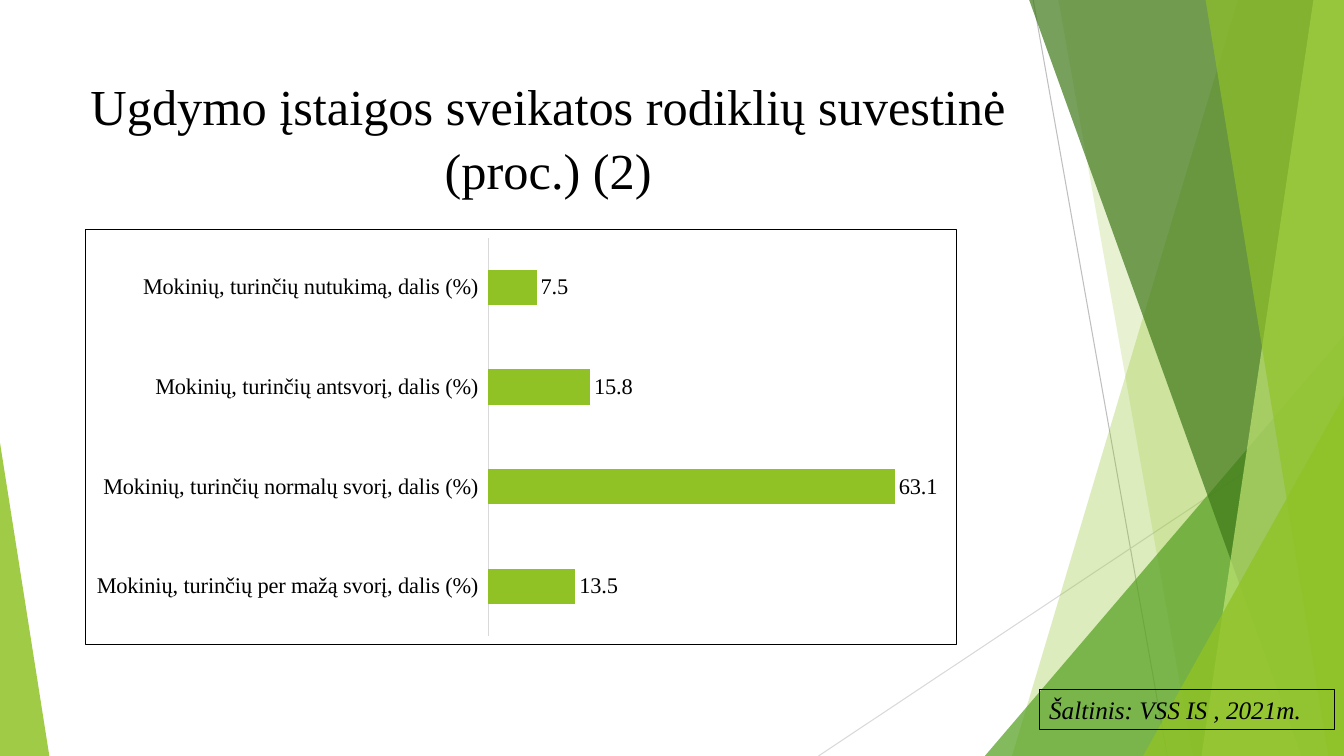
from dataclasses import dataclass

from lxml import etree
from pptx import Presentation
from pptx.chart.data import CategoryChartData
from pptx.dml.color import RGBColor
from pptx.enum.chart import XL_CHART_TYPE as ChartType, XL_LABEL_POSITION as LabelPosition
from pptx.enum.chart import XL_TICK_LABEL_POSITION as TickLabels, XL_TICK_MARK as TickMark
from pptx.enum.shapes import MSO_CONNECTOR as Connector, MSO_SHAPE as Shape
from pptx.enum.text import MSO_ANCHOR as Anchor, PP_ALIGN as Align
from pptx.oxml import parse_xml
from pptx.oxml.ns import nsdecls, qn
from pptx.util import Inches, Pt

SLIDE_WIDTH, SLIDE_HEIGHT = Inches(13.33), Inches(7.5)
COLUMN, ROW = SLIDE_WIDTH / 40, SLIDE_HEIGHT / 30


@dataclass(frozen=True)
class Theme:
    font: str = "Times New Roman"
    chart_font: str = "Cabin"
    title_size: int = 36
    source_size: int = 18
    label_size: int = 16
    chart_size: int = 10
    line_width: float = 0.75
    text: str = "000000"
    lime: str = "90C226"
    green: str = "54A021"
    forest: str = "3F7819"
    pale: str = "C0E474"
    ray: str = "BFBFBF"
    faint: str = "D9D9D9"


THEME = Theme()


@dataclass(frozen=True)
class Box:
    """An area of the slide, measured in grid columns and rows."""
    column: float
    row: float
    columns: float
    rows: float

    def point(self, column, row):
        return round((self.column + column) * COLUMN), round((self.row + row) * ROW)

    def frame(self):
        return (*self.point(0, 0), round(self.columns * COLUMN), round(self.rows * ROW))


def color(code):
    return RGBColor.from_string(code)


def style_line(line, code):
    line.color.rgb = color(code)
    line.width = Pt(THEME.line_width)


def style_font(font, size, name=THEME.font):
    font.name, font.size = name, Pt(size)
    font.color.rgb = color(THEME.text)


def paint(shape, code, opacity):
    """Fill a shape with a see-through colour; opacity is in percent."""
    shape.shadow.inherit = False
    shape.line.fill.background()
    shape.fill.solid()
    shape.fill.fore_color.rgb = color(code)
    tone = shape.element.spPr.find(".//" + qn("a:srgbClr"))
    etree.SubElement(tone, qn("a:alpha")).set("val", str(opacity * 1000))


def add_ray(slide, box, start, end, code):
    ray = slide.shapes.add_connector(Connector.STRAIGHT, *box.point(*start), *box.point(*end))
    style_line(ray.line, code)
    etree.SubElement(ray.element.spPr, qn("a:effectLst"))


def add_band(slide, box, top, bottom, code, opacity):
    """Full-height band from a slanted left edge to the right edge of the box."""
    builder = slide.shapes.build_freeform(*box.point(top, 0), scale=1.0)
    corners = (box.columns, 0), (box.columns, box.rows), (bottom, box.rows)
    builder.add_line_segments([box.point(*corner) for corner in corners], close=True)
    paint(builder.convert_to_shape(), code, opacity)


def add_wedge(slide, box, apex, code, opacity):
    """Triangle filling the box; apex is the share of its width where the tip lies."""
    wedge = slide.shapes.add_shape(Shape.ISOSCELES_TRIANGLE, *box.frame())
    wedge.adjustments[0] = apex
    paint(wedge, code, opacity)


def add_right_wedge(slide, box, left, top, code, opacity):
    corner = Box(box.column + left, box.row + top, box.columns - left, box.rows - top)
    add_wedge(slide, corner, 1, code, opacity)


def add_facets(slide, box):
    add_ray(slide, box, (6.75, 0), (10.74, box.rows), THEME.ray)
    add_ray(slide, box, (box.columns, 16.12), (0.36, box.rows), THEME.faint)
    add_band(slide, box, 12.84, 6.12, THEME.lime, 30)
    add_band(slide, box, 7.5, 11.5, THEME.lime, 20)
    add_right_wedge(slide, box, 5.31, 13.32, THEME.green, 72)
    add_band(slide, box, 6.63, 14.73, THEME.forest, 70)
    add_band(slide, box, 15.09, 11.76, THEME.pale, 70)
    add_band(slide, box, 11.88, 15.54, THEME.lime, 65)
    add_right_wedge(slide, box, 10.02, 15.72, THEME.lime, 80)


def add_title(slide, box, text):
    text_frame = slide.shapes.add_textbox(*box.frame()).text_frame
    text_frame.word_wrap = True
    text_frame.vertical_anchor = Anchor.TOP
    text_frame.text = text
    paragraph = text_frame.paragraphs[0]
    paragraph.alignment = Align.CENTER
    paragraph.line_spacing = 1.05
    style_font(paragraph.runs[0].font, THEME.title_size)


def add_source(slide, box, text):
    shape = slide.shapes.add_shape(Shape.RECTANGLE, *box.frame())
    shape.shadow.inherit = False
    shape.fill.background()
    style_line(shape.line, THEME.text)
    text_frame = shape.text_frame
    text_frame.word_wrap = True
    text_frame.vertical_anchor = Anchor.TOP
    text_frame.text = text
    paragraph = text_frame.paragraphs[0]
    paragraph.alignment = Align.LEFT
    font = paragraph.runs[0].font
    style_font(font, THEME.source_size)
    font.italic = True


def frame_chart(chart):
    """Draw the chart's border and fix the place of its plot area."""
    chart_space = chart.element
    chart_space.find(qn("c:chart")).addnext(parse_xml(
        f'<c:spPr {nsdecls("c", "a")}><a:noFill/><a:ln w="{Pt(THEME.line_width)}"><a:solidFill>'
        f'<a:srgbClr val="{THEME.text}"/></a:solidFill></a:ln></c:spPr>'))
    plot_area = chart_space.find(".//" + qn("c:plotArea"))
    for old_layout in plot_area.findall(qn("c:layout")):
        plot_area.remove(old_layout)
    shares = {"x": 0.463, "y": 0.02, "w": 0.518, "h": 0.96}
    places = "".join(f'<c:{key} val="{share}"/>' for key, share in shares.items())
    plot_area.insert(0, parse_xml(
        f'<c:layout {nsdecls("c")}><c:manualLayout><c:layoutTarget val="inner"/>'
        f'<c:xMode val="edge"/><c:yMode val="edge"/>{places}</c:manualLayout></c:layout>'))


def add_weight_chart(slide, box, shares):
    data = CategoryChartData()
    data.categories = list(shares)
    data.add_series("Series 1", list(shares.values()))
    chart = slide.shapes.add_chart(ChartType.BAR_CLUSTERED, *box.frame(), data).chart
    chart.has_legend = chart.has_title = False
    style_font(chart.font, THEME.chart_size, THEME.chart_font)

    category_axis = chart.category_axis
    category_axis.major_tick_mark = category_axis.minor_tick_mark = TickMark.NONE
    category_axis.tick_label_position = TickLabels.LOW
    style_font(category_axis.tick_labels.font, THEME.label_size)
    style_line(category_axis.format.line, THEME.faint)
    value_axis = chart.value_axis
    value_axis.minimum_scale, value_axis.maximum_scale = 0, 70
    value_axis.has_major_gridlines = value_axis.visible = False

    plot = chart.plots[0]
    plot.gap_width = 182
    plot.vary_by_categories = False
    series = plot.series[0]
    series.format.fill.solid()
    series.format.fill.fore_color.rgb = color(THEME.lime)
    labels = series.data_labels
    labels.show_value = True
    labels.position = LabelPosition.OUTSIDE_END
    style_font(labels.font, THEME.label_size)
    frame_chart(chart)


def main():
    presentation = Presentation()
    presentation.slide_width, presentation.slide_height = SLIDE_WIDTH, SLIDE_HEIGHT
    slide = presentation.slides.add_slide(presentation.slide_layouts[6])
    add_facets(slide, Box(24, 0, 16, 30))
    add_wedge(slide, Box(0, 17.56, 1.47, 12.44), 0, THEME.lime, 85)
    add_title(slide, Box(2.22, 2.68, 28.2, 5.76),
              "Ugdymo įstaigos sveikatos rodiklių suvestinė (proc.) (2)")
    add_source(slide, Box(30.93, 27.36, 8.79, 1.6), "Šaltinis: VSS IS , 2021m.")
    add_weight_chart(slide, Box(2.52, 9.08, 25.95, 16.52), {
        "Mokinių, turinčių per mažą svorį, dalis (%)": 13.5,
        "Mokinių, turinčių normalų svorį, dalis (%)": 63.1,
        "Mokinių, turinčių antsvorį, dalis (%)": 15.8,
        "Mokinių, turinčių nutukimą, dalis (%)": 7.5,
    })
    presentation.save("out.pptx")


if __name__ == "__main__":
    main()
